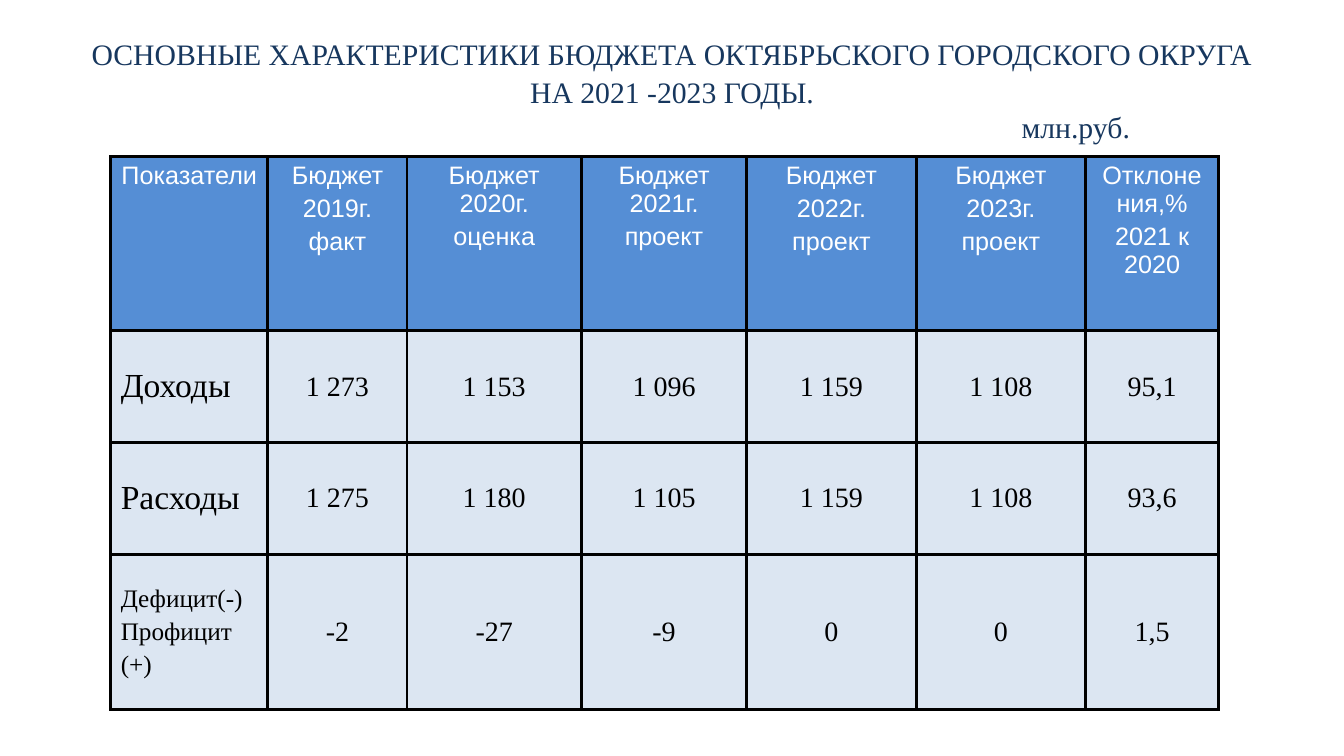
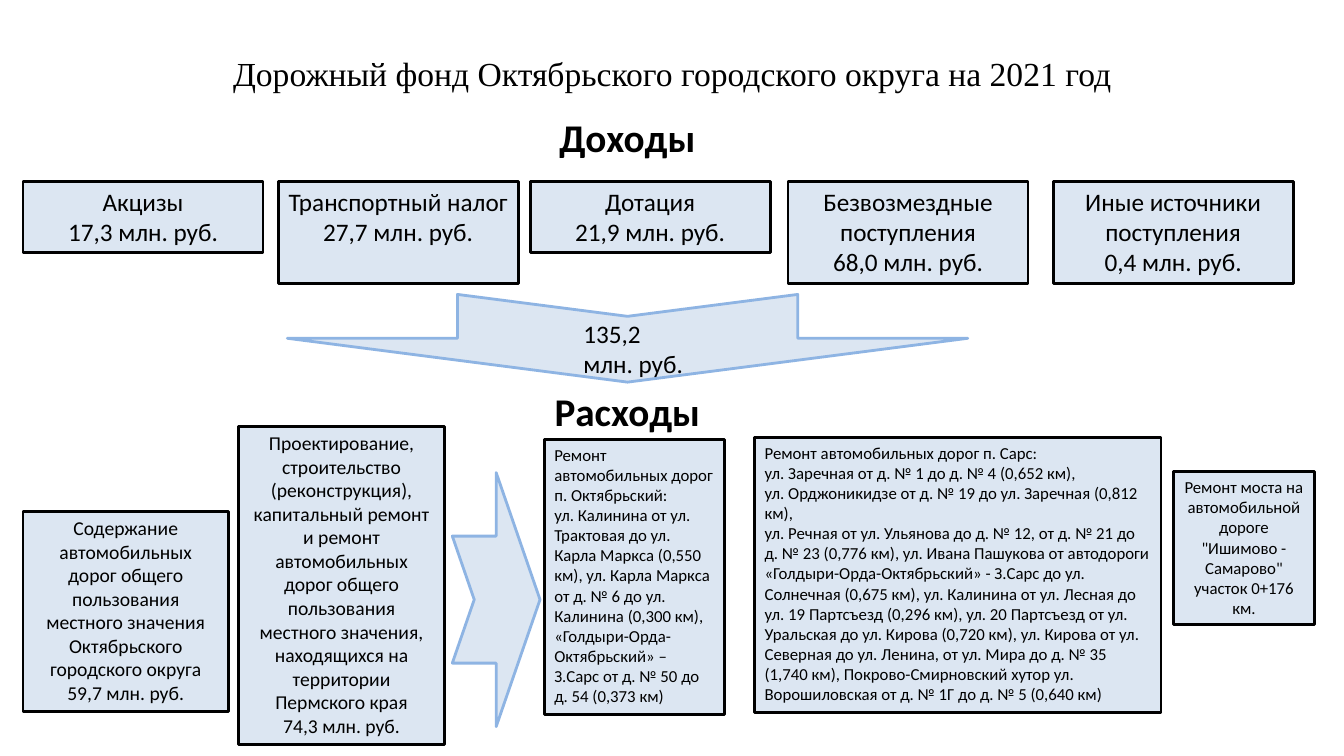
from lxml import etree
from pptx import Presentation
from pptx.dml.color import RGBColor
from pptx.enum.shapes import MSO_SHAPE
from pptx.enum.text import MSO_ANCHOR, PP_ALIGN
from pptx.oxml.ns import qn
from pptx.util import Cm, Pt

RECTANGLE = MSO_SHAPE.RECTANGLE
NOTCHED_ARROW = MSO_SHAPE.NOTCHED_RIGHT_ARROW
LEFT, CENTER, RIGHT = PP_ALIGN.LEFT, PP_ALIGN.CENTER, PP_ALIGN.RIGHT
TOP, MIDDLE = MSO_ANCHOR.TOP, MSO_ANCHOR.MIDDLE

BLACK = RGBColor(0x00, 0x00, 0x00)
WHITE = RGBColor(0xFF, 0xFF, 0xFF)
NAVY = RGBColor(0x17, 0x37, 0x5E)
BLUE = RGBColor(0x55, 0x8E, 0xD5)
SKY = RGBColor(0x8E, 0xB4, 0xE3)
PALE = RGBColor(0xDC, 0xE6, 0xF2)

SERIF, SANS, HEADER_FONT = "Times New Roman", "Calibri", "Arial"

BUDGET_COLUMNS = (3.96, 3.51, 4.39, 4.17, 4.27, 4.27, 3.35)
BUDGET_ROWS = (4.39, 2.82, 2.82, 3.91)
BUDGET = (
    ("Показатели", "Бюджет\n2019г.\nфакт", "Бюджет 2020г.\nоценка",
     "Бюджет 2021г.\nпроект", "Бюджет\n2022г.\nпроект",
     "Бюджет\n2023г.\nпроект", "Отклонения,%\n2021 к 2020"),
    ("Доходы", "1 273", "1 153", "1 096", "1 159", "1 108", "95,1"),
    ("Расходы", "1 275", "1 180", "1 105", "1 159", "1 108", "93,6"),
    ("Дефицит(-)\nПрофицит\n(+)", "-2", "-27", "-9", "0", "0", "1,5"),
)
LABEL_SIZES = (18, 24, 24, 18)

# Offset from the left of the region, height, text
INCOMES = (
    (0, 1.8, "Акцизы\n17,3 млн. руб."),
    (6.43, 2.57, "Транспортный налог\n27,7 млн. руб."),
    (12.78, 1.8, "Дотация\n21,9 млн. руб."),
    (19.28, 2.57, "Безвозмездные поступления\n68,0 млн. руб."),
    (25.96, 2.57, "Иные источники поступления\n0,4 млн. руб."),
)
INCOME_WIDTH = 6.05

# Box relative to the region, font size, alignment, text
EXPENSES = (
    ((0, 2.14, 5.18, 5.05), 14, CENTER,
     "Содержание автомобильных дорог общего пользования местного значения "
     "Октябрьского городского округа\v59,7 млн. руб."),
    ((5.44, 0, 5.18, 8.03), 14, CENTER,
     "Проектирование, строительство (реконструкция), капитальный ремонт и "
     "ремонт автомобильных дорог общего пользования местного значения, "
     "находящихся на территории Пермского края\v74,3 млн. руб."),
    ((13.14, 0.33, 4.55, 6.93), 12, LEFT,
     "Ремонт автомобильных дорог п. Октябрьский:\n"
     "ул. Калинина от ул. Трактовая до ул. Карла Маркса (0,550 км), "
     "ул. Карла Маркса от д. № 6 до ул. Калинина (0,300 км), "
     "«Голдыри-Орда-Октябрьский» – З.Сарс от д. № 50 до д. 54 (0,373 км)"),
    ((18.44, 0.28, 10.24, 6.93), 12, LEFT,
     "Ремонт автомобильных дорог п. Сарс:\n"
     "ул. Заречная от д. № 1 до д. № 4 (0,652 км),\n"
     "ул. Орджоникидзе от д. № 19 до ул. Заречная (0,812 км),\n"
     "ул. Речная от ул. Ульянова до д. № 12, от д. № 21 до д. № 23 "
     "(0,776 км), ул. Ивана Пашукова от автодороги "
     "«Голдыри-Орда-Октябрьский» - З.Сарс до ул. Солнечная (0,675 км), "
     "ул. Калинина от ул. Лесная до ул. 19 Партсъезд (0,296 км), "
     "ул. 20 Партсъезд от ул. Уральская до ул. Кирова (0,720 км), "
     "ул. Кирова от ул. Северная до ул. Ленина, от ул. Мира до д. № 35 "
     "(1,740 км), Покрово-Смирновский хутор ул. Ворошиловская от д. № 1Г "
     "до д. № 5 (0,640 км)"),
    ((28.99, 1.15, 3.56, 3.84), 12, CENTER,
     "Ремонт моста на автомобильной дороге \"Ишимово - Самарово\" "
     "участок 0+176 км."),
)


def write(frame, text, size, font, color=BLACK, align=LEFT, bold=False,
          before=0, spacing=1.0):
    frame.text = text
    for paragraph in frame.paragraphs:
        paragraph.alignment = align
        paragraph.space_before = Pt(before)
        paragraph.line_spacing = spacing
        for run in paragraph.runs:
            run.font.size = Pt(size)
            run.font.name = font
            run.font.bold = bold
            run.font.color.rgb = color


def add_text(slide, box, text, size, font, anchor=TOP, **style):
    frame = slide.shapes.add_textbox(*map(Cm, box)).text_frame
    frame.word_wrap = True
    frame.vertical_anchor = anchor
    write(frame, text, size, font, **style)


def add_title(slide, text, size, color):
    add_text(slide, (1.7, 0.76, 30.48, 2.08), text, size, SERIF, MIDDLE,
             color=color, align=CENTER, spacing=1.07)


def add_heading(slide, top, text):
    add_text(slide, (13.36, top, 4.9, 1.45), text, 28, SANS,
             align=CENTER, bold=True)


def add_pale_shape(slide, kind, box, line_color):
    shape = slide.shapes.add_shape(kind, *map(Cm, box))
    shape.shadow.inherit = False
    shape.fill.solid()
    shape.fill.fore_color.rgb = PALE
    shape.line.color.rgb = line_color
    shape.line.width = Pt(2)
    return shape


def add_card(slide, box, text, size, align=CENTER):
    frame = add_pale_shape(slide, RECTANGLE, box, BLACK).text_frame
    frame.word_wrap = True
    frame.vertical_anchor = TOP
    write(frame, text, size, SANS, align=align)


def add_down_arrow(slide, left, top, width, height):
    """Turn a right arrow so that it fills the given box pointing down."""
    shift = (width - height) / 2
    arrow = add_pale_shape(slide, NOTCHED_ARROW,
                           (left + shift, top - shift, height, width), SKY)
    arrow.rotation = 90


def set_borders(cell, width=Pt(2.25)):
    properties = cell._tc.get_or_add_tcPr()
    for position, side in enumerate(("a:lnL", "a:lnR", "a:lnT", "a:lnB")):
        line = etree.Element(qn(side), w=str(int(width)))
        fill = etree.SubElement(line, qn("a:solidFill"))
        etree.SubElement(fill, qn("a:srgbClr"), val=str(BLACK))
        properties.insert(position, line)


def add_budget_table(slide, left, top):
    box = (left, top, sum(BUDGET_COLUMNS), sum(BUDGET_ROWS))
    table = slide.shapes.add_table(len(BUDGET_ROWS), len(BUDGET_COLUMNS),
                                   *map(Cm, box)).table
    for column, width in zip(table.columns, BUDGET_COLUMNS):
        column.width = Cm(width)
    for row, height in zip(table.rows, BUDGET_ROWS):
        row.height = Cm(height)
    for r, texts in enumerate(BUDGET):
        header = r == 0
        for c, text in enumerate(texts):
            cell = table.cell(r, c)
            label = c == 0
            size = LABEL_SIZES[r] if header or label else 20
            cell.fill.solid()
            cell.fill.fore_color.rgb = BLUE if header else PALE
            cell.vertical_anchor = TOP if header else MIDDLE
            write(cell.text_frame, text, size,
                  HEADER_FONT if header else SERIF,
                  color=WHITE if header else BLACK,
                  align=LEFT if label and not header else CENTER,
                  before=size * 0.2)
            set_borders(cell)


def add_incomes(slide, left, top):
    for offset, height, text in INCOMES:
        add_card(slide, (left + offset, top, INCOME_WIDTH, height), text, 18)


def add_total(slide, left, top, width, height):
    add_down_arrow(slide, left, top, width, height)
    add_text(slide, (left + 7.21, top + 0.48, 3.33, 1.8),
             "135,2\vмлн. руб.", 18, SANS)


def add_expenses(slide, left, top):
    for (x, y, width, height), size, align, text in EXPENSES:
        add_card(slide, (left + x, top + y, width, height), text, size, align)
    add_pale_shape(slide, NOTCHED_ARROW,
                   (left + 10.82, top + 1.17, 2.21, 6.4), SKY)


def build_budget_slide(slide):
    add_title(slide, "ОСНОВНЫЕ ХАРАКТЕРИСТИКИ БЮДЖЕТА ОКТЯБРЬСКОГО "
              "ГОРОДСКОГО ОКРУГА НА 2021 -2023 ГОДЫ.", 21.2, NAVY)
    add_text(slide, (23.4, 2.69, 5.33, 1.02), "млн.руб.", 21.2, SERIF,
             MIDDLE, color=NAVY, align=RIGHT)
    add_budget_table(slide, 2.79, 3.94)


def build_road_fund_slide(slide):
    add_title(slide, "Дорожный фонд Октябрьского городского округа на 2021 год",
              24, BLACK)
    add_heading(slide, 2.74, "Доходы")
    add_incomes(slide, 0.58, 4.57)
    add_total(slide, 7.24, 7.42, 17.15, 2.21)
    add_heading(slide, 9.63, "Расходы")
    add_expenses(slide, 0.58, 10.74)


def main():
    deck = Presentation()
    deck.slide_width, deck.slide_height = Cm(33.87), Cm(19.05)
    blank = deck.slide_layouts[6]
    for build in (build_budget_slide, build_road_fund_slide):
        build(deck.slides.add_slide(blank))
    deck.save("out.pptx")


if __name__ == "__main__":
    main()
